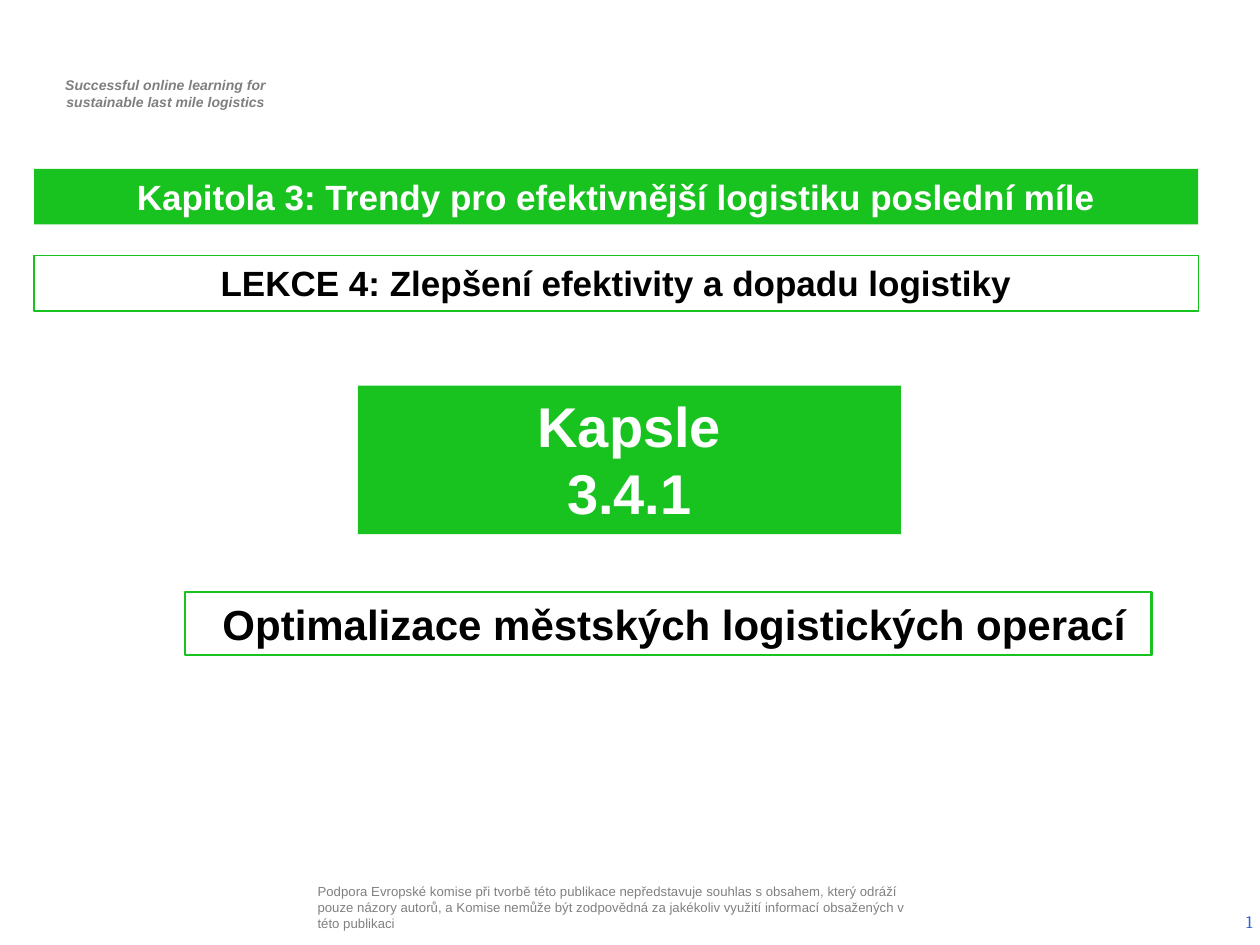
import dataclasses

import pptx
import pptx.dml.color
import pptx.enum.shapes
import pptx.enum.text
import pptx.util

ALIGN = pptx.enum.text.PP_ALIGN
ANCHOR = pptx.enum.text.MSO_ANCHOR
COLS, ROWS = 100, 75


@dataclasses.dataclass(frozen=True)
class Theme:
    font: str = "Arial"
    number_font: str = "Cambria"
    green: str = "18C320"
    white: str = "FFFFFF"
    black: str = "000000"
    tagline: str = "7F7F7F"
    disclaimer: str = "808080"
    number: str = "3366CC"
    capsule_size: float = 32
    topic_size: float = 24
    heading_size: float = 20
    number_size: float = 10
    tagline_size: float = 8
    disclaimer_size: float = 7.5


THEME = Theme()


def rgb(value):
    return pptx.dml.color.RGBColor.from_string(value)


def grid_box(prs, col, row, cols, rows):
    """Turn grid columns and rows into left, top, width and height."""
    w, h = prs.slide_width / COLS, prs.slide_height / ROWS
    return [round(v) for v in (col * w, row * h, cols * w, rows * h)]


def write(sp, text, size, color, align=ALIGN.CENTER, anchor=ANCHOR.TOP,
          insets=(0.1, 0.05, 0.1, 0.05), font=THEME.font, bold=False, italic=False):
    tf = sp.text_frame
    tf.text = text
    tf.word_wrap = True
    tf.auto_size = pptx.enum.text.MSO_AUTO_SIZE.NONE
    tf.vertical_anchor = anchor
    tf.margin_left, tf.margin_top, tf.margin_right, tf.margin_bottom = map(
        pptx.util.Inches, insets)
    for p in tf.paragraphs:
        p.alignment = align
        for r in p.runs:
            r.font.name, r.font.size = font, pptx.util.Pt(size)
            r.font.bold, r.font.italic = bold, italic
            r.font.color.rgb = rgb(color)


def fill_green(sp):
    sp.fill.solid()
    sp.fill.fore_color.rgb = rgb(THEME.green)
    sp.line.fill.background()


def outline_green(sp, width):
    sp.fill.background()
    sp.line.color.rgb = rgb(THEME.green)
    sp.line.width = pptx.util.Pt(width)


def add_panel(s, box):
    sp = s.shapes.add_shape(pptx.enum.shapes.MSO_SHAPE.RECTANGLE, *box)
    sp.shadow.inherit = False
    return sp


def add_tagline(s, box):
    write(s.shapes.add_textbox(*box),
          "Successful online learning for\nsustainable last mile logistics",
          THEME.tagline_size, THEME.tagline, bold=True, italic=True)


def add_chapter(s, box):
    sp = s.shapes.title
    sp.left, sp.top, sp.width, sp.height = box
    fill_green(sp)
    write(sp, "Kapitola 3: Trendy pro efektivnější logistiku poslední míle",
          THEME.heading_size, THEME.white, bold=True)


def add_lesson(s, box):
    sp = add_panel(s, box)
    outline_green(sp, 0.75)
    write(sp, "LEKCE 4: Zlepšení efektivity a dopadu logistiky",
          THEME.heading_size, THEME.black, bold=True)


def add_capsule(s, box):
    sp = add_panel(s, box)
    fill_green(sp)
    write(sp, "Kapsle\n3.4.1", THEME.capsule_size, THEME.white, bold=True)


def add_topic(s, box):
    sp = add_panel(s, box)
    outline_green(sp, 1.5)
    write(sp, "Optimalizace městských logistických operací",
          THEME.topic_size, THEME.black, bold=True, insets=(0.19, 0.05, 0.1, 0.05))


def add_disclaimer(s, box):
    write(s.shapes.add_textbox(*box),
          "Podpora Evropské komise při tvorbě této publikace nepředstavuje souhlas "
          "s obsahem, který odráží pouze názory autorů, a Komise nemůže být zodpovědná "
          "za jakékoliv využití informací obsažených v této publikaci",
          THEME.disclaimer_size, THEME.disclaimer, ALIGN.LEFT, ANCHOR.MIDDLE, (0.04,) * 4)


def add_page_number(s, box):
    write(s.shapes.add_textbox(*box), "1", THEME.number_size, THEME.number,
          ALIGN.RIGHT, ANCHOR.MIDDLE, (0.1, 0.05, 0.06, 0.05), THEME.number_font)


def main():
    prs = pptx.Presentation()
    prs.slide_width, prs.slide_height = pptx.util.Inches(10), pptx.util.Inches(7.5)
    title_only = prs.slide_layouts[5]
    s = prs.slides.add_slide(title_only)
    regions = [
        (add_tagline, (2.9, 5.6, 20.5, 3.7)),
        (add_chapter, (2.7, 13.4, 92.4, 4.4)),
        (add_lesson, (2.7, 20.3, 92.4, 4.4)),
        (add_capsule, (28.4, 30.6, 43.1, 11.8)),
        (add_topic, (14.7, 47, 76.7, 5)),
        (add_disclaimer, (24.8, 69.5, 48.1, 5)),
        (add_page_number, (77.1, 71.3, 22.9, 3.7)),
    ]
    for add_region, cells in regions:
        add_region(s, grid_box(prs, *cells))
    prs.save("out.pptx")


if __name__ == "__main__":
    main()
